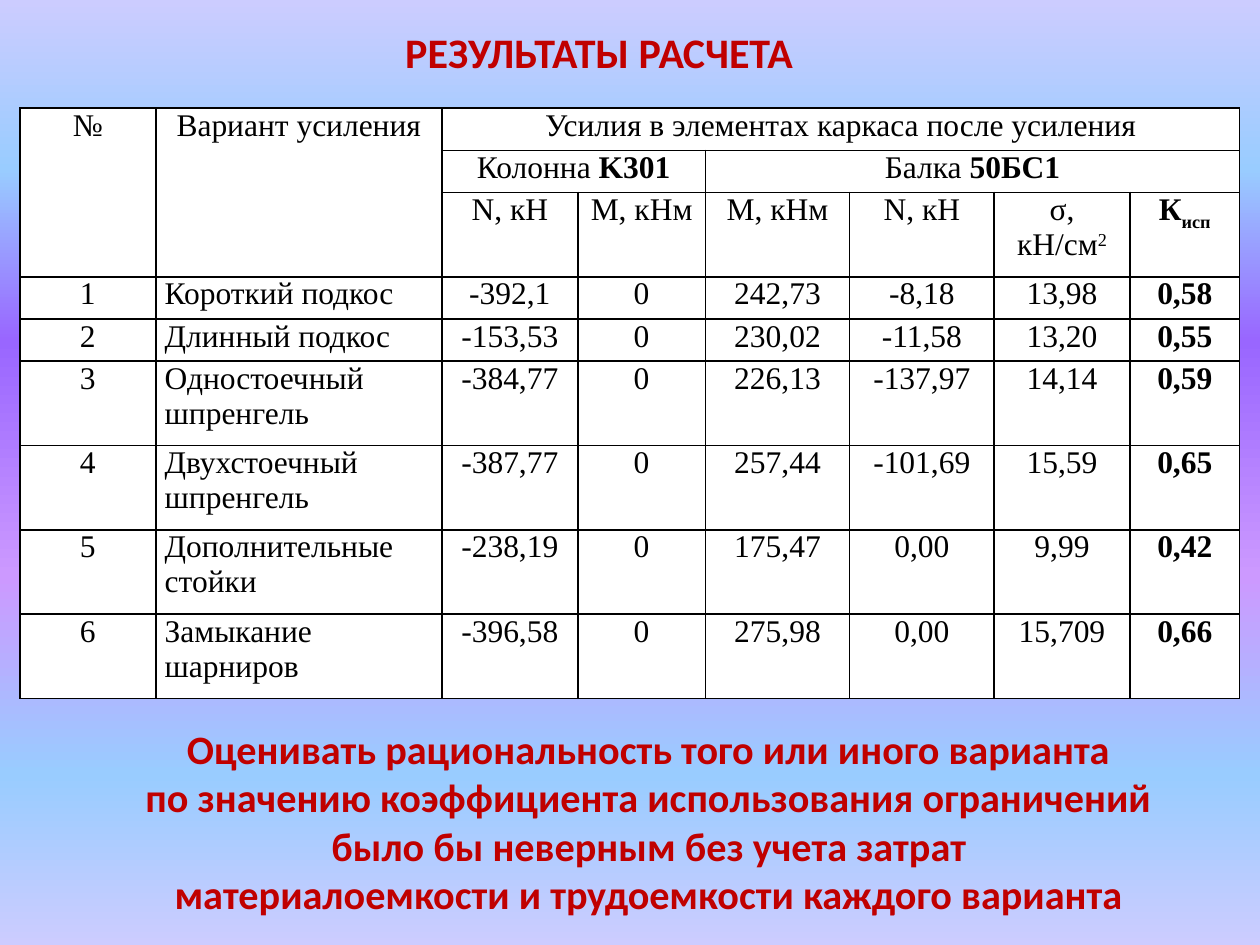
"""Slide with a table of calculation results for frame strengthening variants."""
import dataclasses

import pptx
import pptx.dml.color
import pptx.enum.text
import pptx.oxml
import pptx.oxml.ns
import pptx.util
from lxml import etree

Cm = pptx.util.Cm
ALIGN = pptx.enum.text.PP_ALIGN


@dataclasses.dataclass(frozen=True)
class Theme:
    """Colours, fonts and type sizes of the slide."""
    accent: str = "C00000"
    ink: str = "000000"
    cell: str = "FFFFFF"
    heading_font: str = "Calibri"
    table_font: str = "Times New Roman"
    title_size: int = 24
    conclusion_size: int = 23
    table_size: int = 18
    border_width: int = 1
    gradient: tuple = (
        (0, "CCCCFF", 60), (18, "99CCFF", 100), (36, "9966FF", 100),
        (61, "CC99FF", 100), (82, "99CCFF", 100), (100, "CCCCFF", 100),
    )


THEME = Theme()
COLUMN_WIDTHS = (2.74, 5.77, 2.74, 2.57, 2.91, 2.91, 2.74, 2.21)
LINE_HEIGHT = 0.85
ROW_LINES = (1, 1, 2, 1, 1, 2, 2, 2, 2)

BOLD = {"bold": True}
SUPERSCRIPT = {"baseline": 30}
BOLD_SUBSCRIPT = {"bold": True, "baseline": -25}

HEADERS = (
    ((0, 0), (2, 0), [("№", {})]),
    ((0, 1), (2, 1), [("Вариант усиления", {})]),
    ((0, 2), (0, 7), [("Усилия в элементах каркаса после усиления", {})]),
    ((1, 2), (1, 3), [("Колонна ", {}), ("K301", BOLD)]),
    ((1, 4), (1, 7), [("Балка ", {}), ("50БС1", BOLD)]),
    ((2, 2), (2, 2), [("N, кН", {})]),
    ((2, 3), (2, 3), [("M, кНм", {})]),
    ((2, 4), (2, 4), [("M, кНм", {})]),
    ((2, 5), (2, 5), [("N, кН", {})]),
    ((2, 6), (2, 6), [("σ, кН/см", {}), ("2", SUPERSCRIPT)]),
    ((2, 7), (2, 7), [("К", BOLD), ("исп", BOLD_SUBSCRIPT)]),
)
HEADER_ROWS = 3
RESULTS = (
    ("1", "Короткий подкос", "-392,1", "0", "242,73", "-8,18", "13,98", "0,58"),
    ("2", "Длинный подкос", "-153,53", "0", "230,02", "-11,58", "13,20", "0,55"),
    ("3", "Одностоечный шпренгель", "-384,77", "0", "226,13", "-137,97", "14,14", "0,59"),
    ("4", "Двухстоечный шпренгель", "-387,77", "0", "257,44", "-101,69", "15,59", "0,65"),
    ("5", "Дополнительные стойки", "-238,19", "0", "175,47", "0,00", "9,99", "0,42"),
    ("6", "Замыкание шарниров", "-396,58", "0", "275,98", "0,00", "15,709", "0,66"),
)
VARIANT_COLUMN = 1
USAGE_COLUMN = 7
CONCLUSION = (
    "Оценивать рациональность того или иного варианта",
    "по значению коэффициента использования ограничений",
    "было бы неверным без учета затрат",
    "материалоемкости и трудоемкости каждого варианта",
)


def rgb(value):
    """Turn a hex string into a colour."""
    return pptx.dml.color.RGBColor.from_string(value)


def add_element(parent, tag, **attributes):
    """Append a DrawingML element to a parent and return it."""
    return etree.SubElement(parent, pptx.oxml.ns.qn(tag), **attributes)


def style_run(run, font, size, color, bold=False, baseline=0):
    """Set the font of a run."""
    run.font.name = font
    run.font.size = pptx.util.Pt(size)
    run.font.color.rgb = rgb(color)
    run.font.bold = bold
    if baseline:
        run.font._element.set("baseline", str(baseline * 1000))


def paint_background(slide):
    """Fill the background with the vertical gradient of the theme."""
    fill = slide.background.fill
    fill.gradient()
    fill.gradient_angle = 270
    stops = next(slide.element.iter(pptx.oxml.ns.qn("a:gsLst")))
    for stop in list(stops):
        stops.remove(stop)
    for position, color, opacity in THEME.gradient:
        stop = add_element(stops, "a:gs", pos=str(position * 1000))
        color_element = add_element(stop, "a:srgbClr", val=color)
        if opacity < 100:
            add_element(color_element, "a:alpha", val=str(opacity * 1000))


def add_text(slide, left, top, width, height, lines, size, alignment, wrap):
    """Add a box of bold accent text, one paragraph a line."""
    box = slide.shapes.add_textbox(Cm(left), Cm(top), Cm(width), Cm(height))
    frame = box.text_frame
    frame.word_wrap = wrap
    frame.text = "\n".join(lines)
    for paragraph in frame.paragraphs:
        paragraph.alignment = alignment
        for run in paragraph.runs:
            style_run(run, THEME.heading_font, size, THEME.accent, bold=True)


def format_cell(cell):
    """Give a cell its margins, fill and borders."""
    cell.margin_left = cell.margin_right = Cm(0.18)
    cell.margin_top = cell.margin_bottom = 0
    cell.fill.solid()
    cell.fill.fore_color.rgb = rgb(THEME.cell)
    properties = cell._tc.get_or_add_tcPr()
    for index, side in enumerate(("a:lnL", "a:lnR", "a:lnT", "a:lnB")):
        width = pptx.util.Pt(THEME.border_width)
        border = add_element(properties, side, w=str(int(width)))
        add_element(add_element(border, "a:solidFill"), "a:srgbClr", val=THEME.ink)
        properties.insert(index, border)


def write_cell(cell, pieces, alignment=ALIGN.CENTER):
    """Write the pieces of text of a cell, each with its own style."""
    paragraph = cell.text_frame.paragraphs[0]
    paragraph.alignment = alignment
    for text, style in pieces:
        run = paragraph.add_run()
        run.text = text
        style_run(run, THEME.table_font, THEME.table_size, THEME.ink, **style)


def add_results_table(slide):
    """Add the table of forces for all variants."""
    frame = slide.shapes.add_table(
        len(ROW_LINES), len(COLUMN_WIDTHS), Cm(0.4), Cm(2.18),
        Cm(sum(COLUMN_WIDTHS)), Cm(sum(ROW_LINES) * LINE_HEIGHT))
    table = frame.table
    table.first_row = table.horz_banding = False
    for column, width in zip(table.columns, COLUMN_WIDTHS):
        column.width = Cm(width)
    for row, lines in zip(table.rows, ROW_LINES):
        row.height = Cm(lines * LINE_HEIGHT)
    for cell in table.iter_cells():
        format_cell(cell)
    for first, last, pieces in HEADERS:
        cell = table.cell(*first)
        if first != last:
            cell.merge(table.cell(*last))
        write_cell(cell, pieces)
    for row_index, values in enumerate(RESULTS, HEADER_ROWS):
        for column_index, value in enumerate(values):
            style = BOLD if column_index == USAGE_COLUMN else {}
            alignment = ALIGN.LEFT if column_index == VARIANT_COLUMN else ALIGN.CENTER
            write_cell(table.cell(row_index, column_index), [(value, style)], alignment)


def main():
    """Build the slide and save it."""
    presentation = pptx.Presentation()
    presentation.slide_width = Cm(25.4)
    presentation.slide_height = Cm(19.05)
    slide = presentation.slides.add_slide(presentation.slide_layouts[6])
    paint_background(slide)
    add_results_table(slide)
    add_text(slide, 2.18, 14.48, 21.82, 4.19, CONCLUSION,
             THEME.conclusion_size, ALIGN.CENTER, True)
    add_text(slide, 7.92, 0.41, 8.41, 1.27, ["РЕЗУЛЬТАТЫ РАСЧЕТА"],
             THEME.title_size, ALIGN.LEFT, False)
    presentation.save("out.pptx")


if __name__ == "__main__":
    main()
